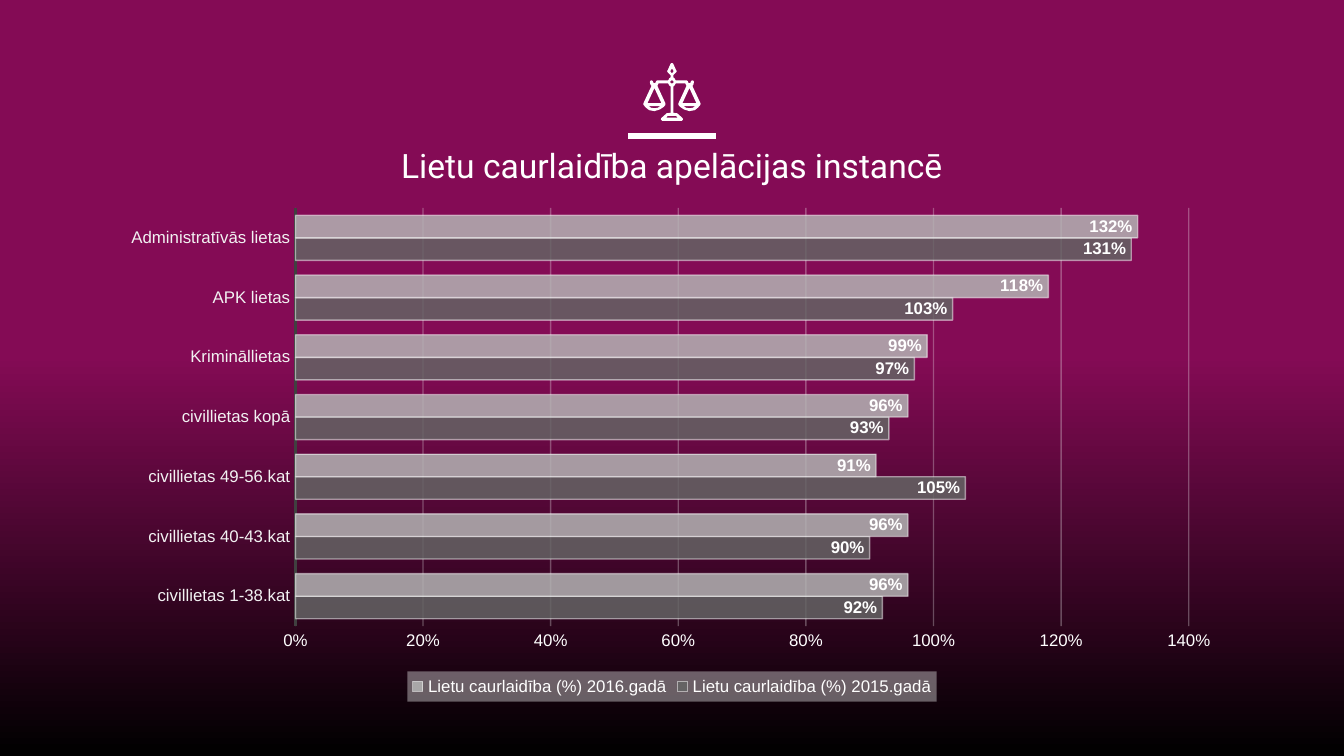
from lxml.etree import SubElement
from pptx import Presentation
from pptx.chart.data import CategoryChartData
from pptx.dml.color import RGBColor
from pptx.enum.chart import XL_CHART_TYPE, XL_LABEL_POSITION, XL_LEGEND_POSITION, XL_TICK_MARK
from pptx.enum.shapes import MSO_CONNECTOR
from pptx.enum.text import MSO_ANCHOR, PP_ALIGN
from pptx.oxml import parse_xml
from pptx.oxml.ns import nsdecls, qn
from pptx.util import Pt

WHITE = RGBColor(0xFF, 0xFF, 0xFF)
PALE = RGBColor(0xF2, 0xF2, 0xF2)
PLUM = RGBColor(0x84, 0x0B, 0x55)
BLACK = RGBColor(0, 0, 0)
AXIS_GREY = RGBColor(0x40, 0x40, 0x40)
DARK_GREY = RGBColor(0x64, 0x64, 0x64)
LIGHT_GREY = RGBColor(0xB4, 0xB4, 0xB4)

TITLE = "Lietu caurlaidība apelācijas instancē"
CATEGORIES = [
    "civillietas 1-38.kat", "civillietas 40-43.kat", "civillietas 49-56.kat",
    "civillietas kopā", "Krimināllietas", "APK lietas", "Administratīvās lietas",
]
SERIES = [
    ("Lietu caurlaidība (%) 2015.gadā", (0.92, 0.90, 1.05, 0.93, 0.97, 1.03, 1.31), DARK_GREY),
    ("Lietu caurlaidība (%) 2016.gadā", (0.96, 0.96, 0.91, 0.96, 0.99, 1.18, 1.32), LIGHT_GREY),
]
PLOT_AREA = {"x": 0.165, "y": 0.018, "w": 0.795, "h": 0.832}

CENTER = 360
ICON_TOP = 33.84
ICON_UNIT = 0.72
SCALES_HALF = [
    (0.5, 0), (1, 0.5), (3, 5), (3.6, 6), (3, 7), (1, 9), (1, 10.6), (2, 11.4), (2.8, 12.9),
    (11, 12.9), (11.8, 13.4), (12.2, 14.6), (13, 15), (13.8, 14.6), (14.2, 13.4), (15, 12.9),
    (16, 13), (16.4, 14), (16, 16), (15.2, 17), (21.3, 30), (21.2, 31), (19.5, 33), (17, 35),
    (13, 35.7), (9, 34.5), (6, 32.5), (4.8, 31), (4.8, 30), (10.8, 17), (10, 15.1), (2.8, 15.1),
    (2, 16.6), (1, 17.4), (1, 37), (3.8, 37.2), (8, 41), (8.2, 42), (7.3, 42.9),
]
CENTER_HOLES = [
    [(0, 4), (1.3, 6), (0, 7.7), (-1.3, 6)],
    [(0, 12.8), (1, 13.2), (1.2, 14), (1, 14.8), (0, 15.2), (-1, 14.8), (-1.2, 14), (-1, 13.2)],
    [(3, 39.2), (4.3, 40.6), (-4.3, 40.6), (-3, 39.2)],
]
SIDE_HOLES = [
    [(13, 18.6), (18.2, 29.8), (7.8, 29.8)],
    [(17.4, 32), (15.5, 33.2), (13, 33.6), (10.5, 33.2), (8.6, 32)],
]


def mirror(points):
    return [(-x, y) for x, y in reversed(points)]


def set_alpha(line_or_fill, percent):
    color = line_or_fill.find(".//" + qn("a:srgbClr"))
    SubElement(color, qn("a:alpha"), val=str(percent * 1000))


def style_font(font, size, color, name="Arial"):
    font.size, font.name = Pt(size), name
    font.color.rgb = color


def add_background(slide):
    fill = slide.background.fill
    fill.gradient()
    fill.gradient_angle = 270
    for stop, (position, color) in zip(fill.gradient_stops, [(0.47, PLUM), (1, BLACK)]):
        stop.position = position
        stop.color.rgb = color


def add_scales(slide):
    contours = [SCALES_HALF + mirror(SCALES_HALF)] + CENTER_HOLES + SIDE_HOLES
    contours += [mirror(hole) for hole in SIDE_HOLES]
    placed = [[(Pt(CENTER + x * ICON_UNIT), Pt(ICON_TOP + y * ICON_UNIT)) for x, y in contour]
              for contour in contours]
    builder = slide.shapes.build_freeform(*placed[0][0], scale=1.0)
    for index, contour in enumerate(placed):
        if index:
            builder.move_to(*contour[0])
        builder.add_line_segments(contour[1:], close=True)
    shape = builder.convert_to_shape()
    shape.shadow.inherit = False
    shape.fill.solid()
    shape.fill.fore_color.rgb = WHITE
    shape.line.fill.background()


def add_heading(slide):
    rule = slide.shapes.add_connector(
        MSO_CONNECTOR.STRAIGHT, Pt(CENTER - 23.5), Pt(72.8), Pt(CENTER + 23.5), Pt(72.8))
    rule.line.color.rgb = WHITE
    rule.line.width = Pt(3)
    SubElement(rule._element.spPr, qn("a:effectLst"))

    frame = slide.shapes.add_textbox(Pt(105), Pt(44), Pt(510), Pt(62.6)).text_frame
    frame.word_wrap = True
    frame.vertical_anchor = MSO_ANCHOR.BOTTOM
    frame.margin_left = frame.margin_right = frame.margin_top = frame.margin_bottom = Pt(7.2)
    paragraph = frame.paragraphs[0]
    paragraph.alignment = PP_ALIGN.CENTER
    run = paragraph.add_run()
    run.text = TITLE
    style_font(run.font, 18, WHITE, "Roboto")


def set_plot_area(chart):
    parts = "".join(f'<c:{key} val="{value}"/>' for key, value in PLOT_AREA.items())
    layout = parse_xml(
        f'<c:layout {nsdecls("c")}><c:manualLayout><c:layoutTarget val="inner"/>'
        f'<c:xMode val="edge"/><c:yMode val="edge"/>{parts}</c:manualLayout></c:layout>')
    plot_area = chart._chartSpace.chart.plotArea
    for old in plot_area.findall(qn("c:layout")):
        plot_area.remove(old)
    plot_area.insert(0, layout)


def style_axes(chart):
    for axis, color in [(chart.category_axis, PALE), (chart.value_axis, WHITE)]:
        axis.major_tick_mark = axis.minor_tick_mark = XL_TICK_MARK.NONE
        style_font(axis.tick_labels.font, 9, color)
    chart.category_axis.format.line.color.rgb = AXIS_GREY
    chart.category_axis.format.line.width = Pt(1.5)
    values = chart.value_axis
    values.minimum_scale, values.maximum_scale, values.major_unit = 0, 1.4, 0.2
    values.tick_labels.number_format = "0%"
    values.tick_labels.number_format_is_linked = False
    values.format.line.fill.background()
    values.has_major_gridlines = True
    gridlines = values.major_gridlines.format.line
    gridlines.color.rgb = PALE
    gridlines.width = Pt(0.75)
    set_alpha(gridlines._ln, 30)


def style_legend(chart):
    chart.has_legend = True
    legend = chart.legend
    legend.position = XL_LEGEND_POSITION.BOTTOM
    legend.include_in_layout = False
    style_font(legend.font, 9, WHITE)
    properties = parse_xml(
        f'<c:spPr {nsdecls("c", "a")}><a:solidFill><a:srgbClr val="{PALE}">'
        '<a:alpha val="39000"/></a:srgbClr></a:solidFill></c:spPr>')
    legend._element.find(qn("c:txPr")).addprevious(properties)


def add_case_chart(slide):
    data = CategoryChartData(number_format="0%")
    data.categories = CATEGORIES
    for name, values, _ in SERIES:
        data.add_series(name, values)
    chart = slide.shapes.add_chart(
        XL_CHART_TYPE.BAR_CLUSTERED, Pt(59), Pt(106.6), Pt(602), Pt(269.3), data).chart
    chart.has_title = False
    style_font(chart.font, 10, BLACK)
    plot = chart.plots[0]
    plot.gap_width, plot.overlap, plot.vary_by_categories = 65, 0, False
    for series, (_, _, color) in zip(plot.series, SERIES):
        series.format.fill.solid()
        series.format.fill.fore_color.rgb = color
        set_alpha(series._element.spPr.find(qn("a:solidFill")), 85)
        series.format.line.color.rgb = WHITE
        series.format.line.width = Pt(0.75)
        set_alpha(series.format.line._ln, 50)
        labels = series.data_labels
        labels.show_value = True
        labels.position = XL_LABEL_POSITION.INSIDE_END
        labels.number_format, labels.number_format_is_linked = "0%", False
        style_font(labels.font, 9, WHITE)
        labels.font.bold = True
    style_axes(chart)
    style_legend(chart)
    set_plot_area(chart)


def main():
    presentation = Presentation()
    presentation.slide_width, presentation.slide_height = Pt(720), Pt(405)
    slide = presentation.slides.add_slide(presentation.slide_layouts[6])
    add_background(slide)
    add_scales(slide)
    add_heading(slide)
    add_case_chart(slide)
    presentation.save("out.pptx")


if __name__ == "__main__":
    main()
